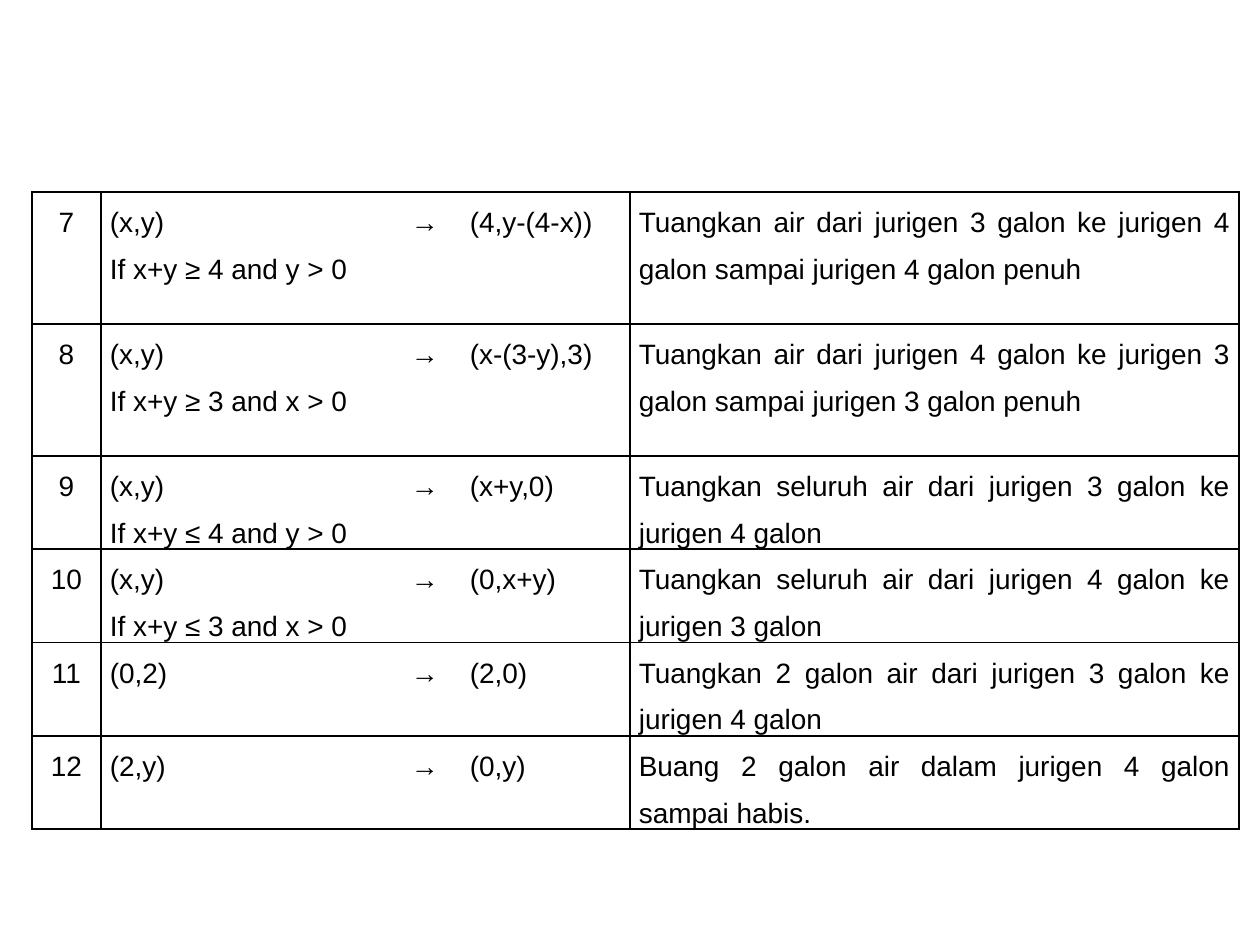
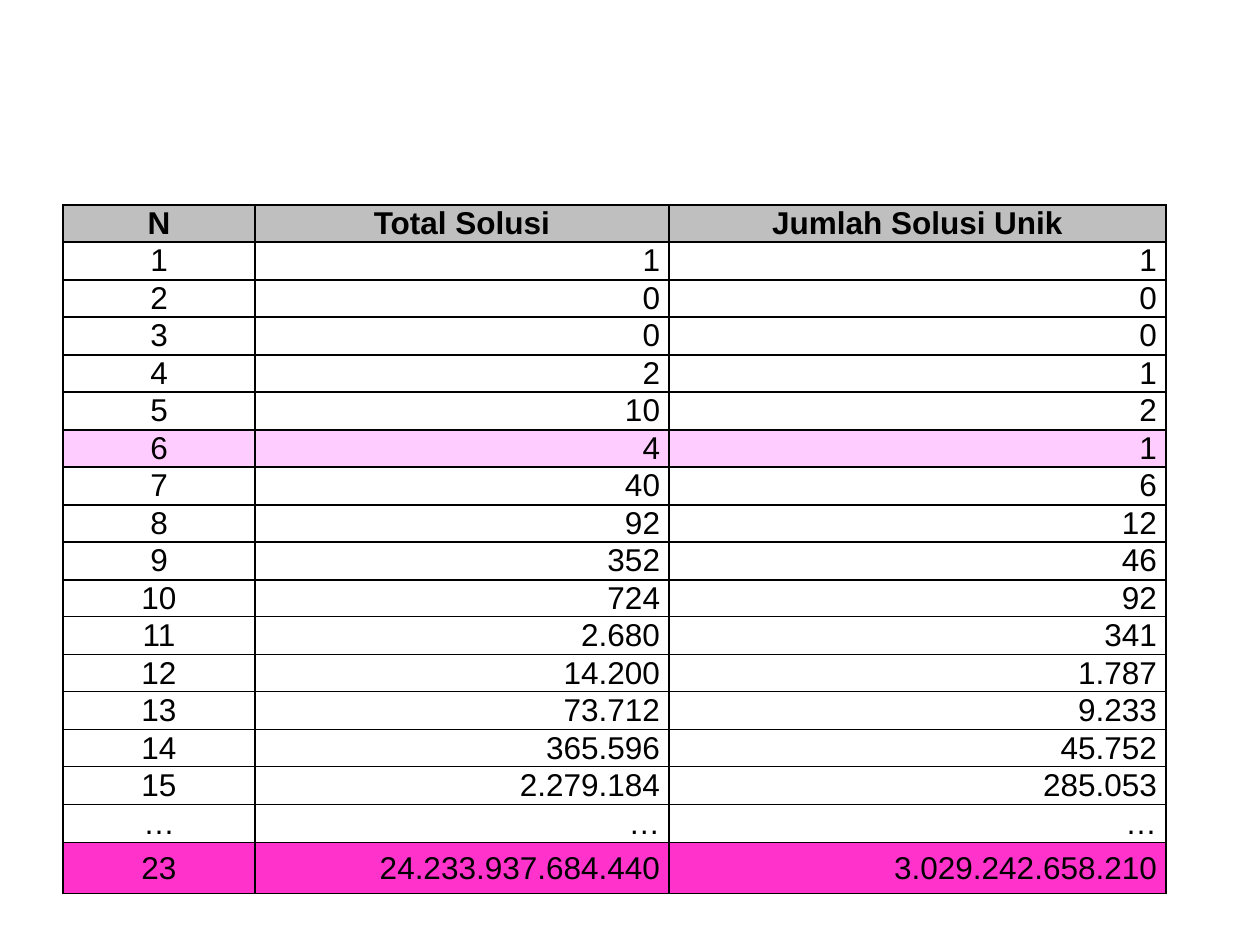
import lxml.etree
import pptx
import pptx.dml.color
import pptx.enum.text
import pptx.oxml.ns
import pptx.util

ALIGN = pptx.enum.text.PP_ALIGN
ANCHOR = pptx.enum.text.MSO_ANCHOR
SCALE = 914400 / 126

JUG_RULES = [
    ("7", "(x,y)\nIf x+y ≥ 4 and y > 0", "→", "(4,y-(4-x))",
     "Tuangkan air dari jurigen 3 galon ke jurigen 4 galon sampai jurigen 4 galon penuh"),
    ("8", "(x,y)\nIf x+y ≥ 3 and x > 0", "→", "(x-(3-y),3)",
     "Tuangkan air dari jurigen 4 galon ke jurigen 3 galon sampai jurigen 3 galon penuh"),
    ("9", "(x,y)\nIf x+y ≤ 4 and y > 0", "→", "(x+y,0)",
     "Tuangkan seluruh air dari jurigen 3 galon ke jurigen 4 galon"),
    ("10", "(x,y)\nIf x+y ≤ 3 and x > 0", "→", "(0,x+y)",
     "Tuangkan seluruh air dari jurigen 4 galon ke jurigen 3 galon"),
    ("11", "(0,2)", "→", "(2,0)",
     "Tuangkan 2 galon air dari jurigen 3 galon ke jurigen 4 galon"),
    ("12", "(2,y)", "→", "(0,y)",
     "Buang 2 galon air dalam jurigen 4 galon sampai habis."),
]

QUEENS = [
    ("N", "Total Solusi", "Jumlah Solusi Unik"),
    ("1", "1", "1"),
    ("2", "0", "0"),
    ("3", "0", "0"),
    ("4", "2", "1"),
    ("5", "10", "2"),
    ("6", "4", "1"),
    ("7", "40", "6"),
    ("8", "92", "12"),
    ("9", "352", "46"),
    ("10", "724", "92"),
    ("11", "2.680", "341"),
    ("12", "14.200", "1.787"),
    ("13", "73.712", "9.233"),
    ("14", "365.596", "45.752"),
    ("15", "2.279.184", "285.053"),
    ("…", "…", "…"),
    ("23", "24.233.937.684.440", "3.029.242.658.210"),
]


def px(count):
    return pptx.util.Emu(round(count * SCALE))


def color(code):
    return pptx.dml.color.RGBColor.from_string(code)


def split(total, count):
    """Cut a length into near-equal whole parts."""
    edges = [total * i // count for i in range(count + 1)]
    return [b - a for a, b in zip(edges, edges[1:])]


def write(frame, text, size, align, bold=False, space=1.0):
    """Fill a text frame, one paragraph per line of text."""
    frame.word_wrap = True
    for i, line in enumerate(text.split("\n")):
        para = frame.paragraphs[0] if i == 0 else frame.add_paragraph()
        para.alignment = align
        para.line_spacing = space
        run = para.add_run()
        run.text = line
        run.font.name = Deck.FONT
        run.font.size = pptx.util.Pt(size)
        run.font.bold = bold
        run.font.color.rgb = color(Deck.INK)


class Deck:
    FONT = "Arial"
    INK = "000000"
    PAPER = "FFFFFF"
    PAD = 9

    def __init__(self):
        self.prs = pptx.Presentation()
        self.prs.slide_width = px(1260)
        self.prs.slide_height = px(945)
        self.slide = None

    def page(self):
        self.slide = self.prs.slides.add_slide(self.prs.slide_layouts[6])
        fill = self.slide.background.fill
        fill.solid()
        fill.fore_color.rgb = color(self.PAPER)

    def border(self, cell, hidden):
        """Rule a cell on all sides but the hidden ones."""
        props = cell._tc.get_or_add_tcPr()
        tag = pptx.oxml.ns.qn
        for side in "LRTB":
            line = lxml.etree.SubElement(props, tag(f"a:ln{side}"), w=str(pptx.util.Pt(1)))
            if side in hidden:
                lxml.etree.SubElement(line, tag("a:noFill"))
            else:
                solid = lxml.etree.SubElement(line, tag("a:solidFill"))
                lxml.etree.SubElement(solid, tag("a:srgbClr"), val=self.INK)

    def cell(self, cell, text, fill, anchor, hidden, **style):
        cell.margin_left = cell.margin_right = px(self.PAD)
        cell.margin_top = cell.margin_bottom = 0
        cell.vertical_anchor = anchor
        self.border(cell, hidden)
        if fill:
            cell.fill.solid()
            cell.fill.fore_color.rgb = color(fill)
        else:
            cell.fill.background()
        write(cell.text_frame, text, **style)

    def table(self, left, top, cols, rows, data, aligns, size, space=1.0,
              anchor=ANCHOR.TOP, fills={}, hidden={}, head=False):
        """Draw a ruled table; fills go by row, hidden sides by column."""
        shape = self.slide.shapes.add_table(
            len(rows), len(cols), px(left), px(top), px(sum(cols)), px(sum(rows)))
        grid = shape.table
        grid.first_row = head
        grid.horz_banding = False
        for col, width in zip(grid.columns, cols):
            col.width = px(width)
        for row, height in zip(grid.rows, rows):
            row.height = px(height)
        for r, texts in enumerate(data):
            top_row = head and r == 0
            for c, text in enumerate(texts):
                self.cell(grid.cell(r, c), text, fills.get(r), anchor, hidden.get(c, ""),
                          size=size, space=space, bold=top_row,
                          align=ALIGN.CENTER if top_row else aligns[c])


def main():
    deck = Deck()

    deck.page()
    deck.table(32, 192, [69, 301, 59, 169, 609], [132] * 2 + [93] * 2 + [86] * 2, JUG_RULES,
               [ALIGN.CENTER] + [ALIGN.JUSTIFY] * 4, size=16, space=1.5,
               hidden={1: "R", 2: "LR", 3: "L"})

    deck.page()
    last = len(QUEENS) - 1
    deck.table(63, 205, [192, 414, 497], split(638, last) + [51], QUEENS,
               [ALIGN.CENTER, ALIGN.RIGHT, ALIGN.RIGHT], size=18, anchor=ANCHOR.MIDDLE,
               fills={0: "BFBFBF", 6: "FFCCFF", last: "FF33CC"}, head=True)

    deck.prs.save("out.pptx")


if __name__ == "__main__":
    main()
